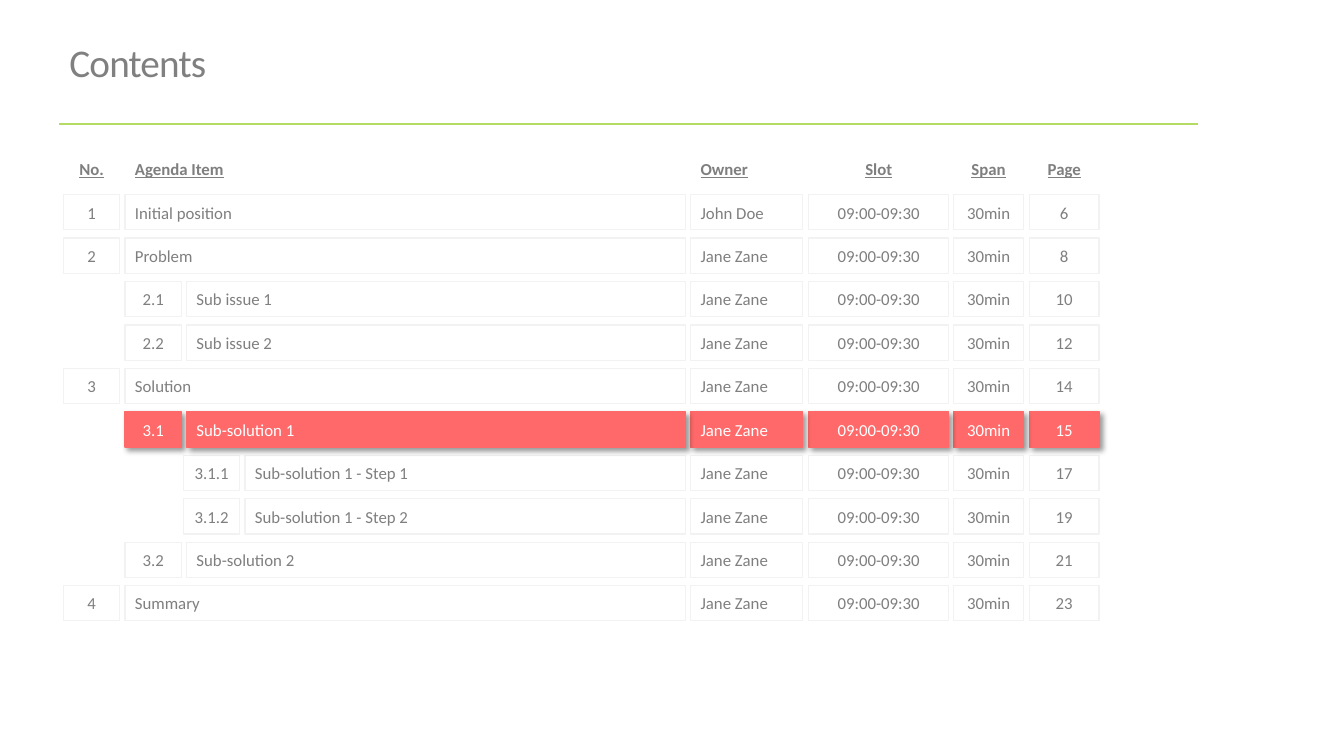
from dataclasses import dataclass

import lxml.etree
import pptx
import pptx.dml.color
import pptx.enum.shapes
import pptx.enum.text
import pptx.oxml
import pptx.oxml.ns
import pptx.shapes.base
import pptx.slide
import pptx.util

Inches = pptx.util.Inches
Pt = pptx.util.Pt
Align = pptx.enum.text.PP_ALIGN


@dataclass(frozen=True)
class Theme:
    font: str = "Calibri"
    text: str = "7F7F7F"
    title: str = "808080"
    rule: str = "B4DC64"
    border: str = "F2F2F2"
    accent: str = "FF6969"
    on_accent: str = "FFFFFF"
    body_size: float = 12
    title_size: float = 28
    border_width: float = 0.85
    rule_width: float = 2


@dataclass(frozen=True)
class Column:
    left: float
    width: float
    align: Align = Align.CENTER
    tight: bool = False


@dataclass(frozen=True)
class AgendaRow:
    number: str
    item: str
    page: str
    owner: str = "Jane Zane"
    slot: str = "09:00-09:30"
    span: str = "30min"
    header: bool = False
    current: bool = False


THEME = Theme()
HEADER_TOP, LAST_TOP, ROW_HEIGHT = 1.5, 5.81, 0.35
NUMBER_LEFTS = (0.63, 1.24, 1.82)
NUMBER_WIDTH, NUMBER_STEP, ITEM_RIGHT = 0.56, 0.61, 6.8
OWNER = Column(6.85, 1.11, Align.LEFT)
SLOT = Column(8.02, 1.39)
SPAN = Column(9.46, 0.69)
PAGE = Column(10.21, 0.69)

ROWS = (
    AgendaRow("No.", "Agenda Item", "Page", "Owner", "Slot", "Span", header=True),
    AgendaRow("1", "Initial position", "6", owner="John Doe"),
    AgendaRow("2", "Problem", "8"),
    AgendaRow("2.1", "Sub issue 1", "10"),
    AgendaRow("2.2", "Sub issue 2", "12"),
    AgendaRow("3", "Solution", "14"),
    AgendaRow("3.1", "Sub-solution 1", "15", current=True),
    AgendaRow("3.1.1", "Sub-solution 1 - Step 1", "17"),
    AgendaRow("3.1.2", "Sub-solution 1 - Step 2", "19"),
    AgendaRow("3.2", "Sub-solution 2", "21"),
    AgendaRow("4", "Summary", "23"),
)


def rgb(value: str) -> pptx.dml.color.RGBColor:
    return pptx.dml.color.RGBColor.from_string(value)


def add_shadow(sp: pptx.shapes.base.BaseShape) -> None:
    effects = sp._element.spPr.find(pptx.oxml.ns.qn("a:effectLst"))
    effects.append(pptx.oxml.parse_xml(
        f'<a:outerShdw {pptx.oxml.ns.nsdecls("a")} blurRad="{Pt(4)}" dist="{Pt(3)}" '
        'dir="2700000" algn="tl" rotWithShape="0">'
        '<a:srgbClr val="000000"><a:alpha val="40000"/></a:srgbClr></a:outerShdw>'))


def add_cell(s: pptx.slide.Slide, column: Column, top: float, text: str, row: AgendaRow) -> None:
    box = [Inches(v) for v in (column.left, top, column.width, ROW_HEIGHT)]
    if row.header:
        sp = s.shapes.add_textbox(*box)
    else:
        sp = s.shapes.add_shape(pptx.enum.shapes.MSO_SHAPE.RECTANGLE, *box)
        sp.shadow.inherit = False
        sp.line.color.rgb = rgb(THEME.accent if row.current else THEME.border)
        sp.line.width = Pt(THEME.border_width)
        if row.current:
            sp.fill.solid()
            sp.fill.fore_color.rgb = rgb(THEME.accent)
            add_shadow(sp)
        else:
            sp.fill.background()
    tf = sp.text_frame
    tf.word_wrap = not column.tight
    tf.vertical_anchor = pptx.enum.text.MSO_ANCHOR.MIDDLE
    if column.tight:
        tf.margin_left = tf.margin_right = tf.margin_top = tf.margin_bottom = 0
    p = tf.paragraphs[0]
    p.text = text
    p.alignment = column.align
    p.font.name = THEME.font
    p.font.size = Pt(THEME.body_size)
    p.font.color.rgb = rgb(THEME.on_accent if row.current else THEME.text)
    if row.header:
        p.font.bold = p.font.underline = True


def add_row(s: pptx.slide.Slide, top: float, row: AgendaRow) -> None:
    level = 0 if row.header else row.number.count(".")
    left = NUMBER_LEFTS[level]
    item_left = left + NUMBER_STEP
    number = Column(left, NUMBER_WIDTH, tight=True)
    item = Column(item_left, ITEM_RIGHT - item_left, Align.LEFT)
    cells = ((PAGE, row.page), (SPAN, row.span), (SLOT, row.slot),
             (OWNER, row.owner), (number, row.number), (item, row.item))
    for column, text in cells:
        add_cell(s, column, top, text, row)


def add_rule(s: pptx.slide.Slide) -> None:
    rule = s.shapes.add_connector(pptx.enum.shapes.MSO_CONNECTOR.STRAIGHT,
                                  Inches(0.59), Inches(1.23), Inches(11.88), Inches(1.23))
    rule.line.color.rgb = rgb(THEME.rule)
    rule.line.width = Pt(THEME.rule_width)
    lxml.etree.SubElement(rule._element.spPr, pptx.oxml.ns.qn("a:effectLst"))


def add_title(s: pptx.slide.Slide) -> None:
    sp = s.shapes.add_textbox(Inches(0.59), Inches(0.18), Inches(11.25), Inches(0.93))
    tf = sp.text_frame
    tf.word_wrap = True
    tf.vertical_anchor = pptx.enum.text.MSO_ANCHOR.MIDDLE
    p = tf.paragraphs[0]
    r = p.add_run()
    r.text = "Contents"
    r._r.get_or_add_rPr().set("spc", "-60")
    p.line_spacing = 0.9
    p.font.name = THEME.font
    p.font.size = Pt(THEME.title_size)
    p.font.color.rgb = rgb(THEME.title)


def main() -> None:
    prs = pptx.Presentation()
    prs.slide_width, prs.slide_height = Inches(13.33), Inches(7.5)
    s = prs.slides.add_slide(prs.slide_layouts[6])
    add_rule(s)
    pitch = (LAST_TOP - HEADER_TOP) / (len(ROWS) - 1)
    for index, row in reversed(list(enumerate(ROWS))):
        add_row(s, HEADER_TOP + index * pitch, row)
    add_title(s)
    prs.save("out.pptx")


if __name__ == "__main__":
    main()
